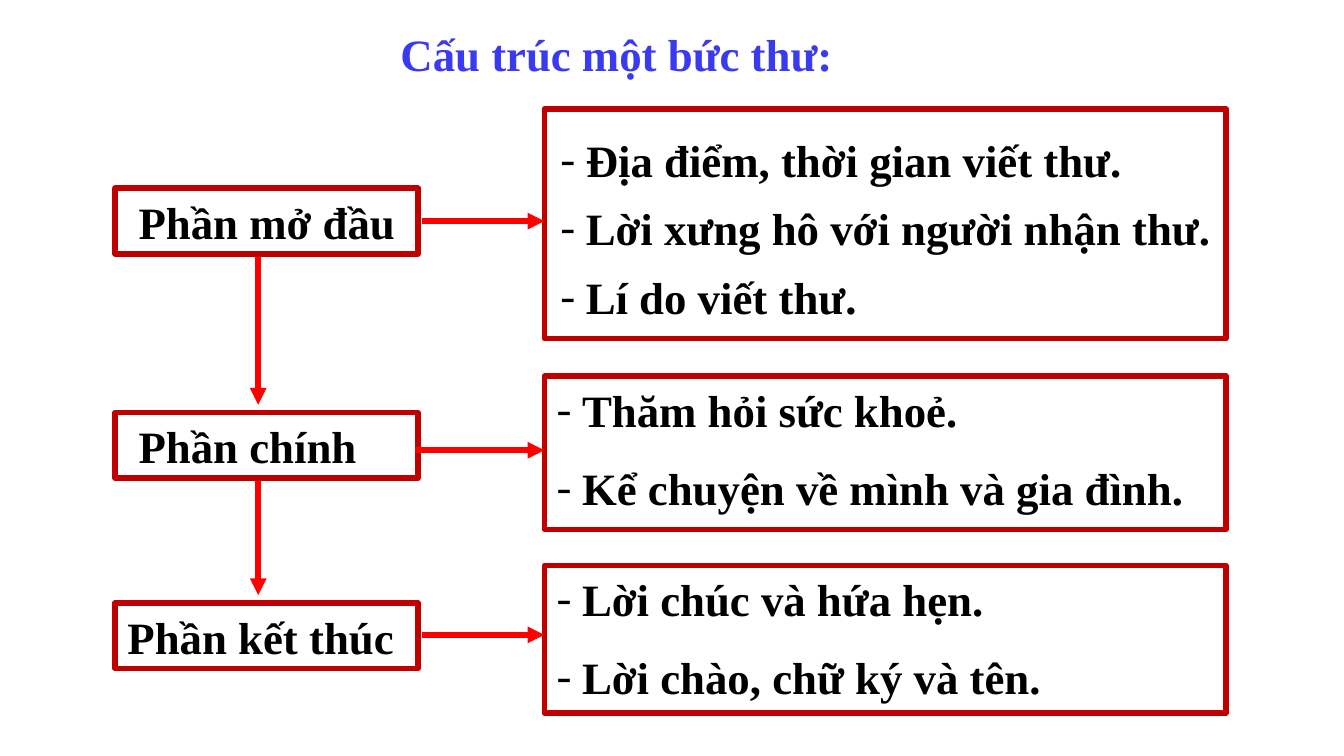
import pptx
import pptx.dml.color
import pptx.enum.shapes
import pptx.enum.text
import pptx.oxml
import pptx.oxml.ns
import pptx.util

Cm = pptx.util.Cm
Pt = pptx.util.Pt
RGBColor = pptx.dml.color.RGBColor
Align = pptx.enum.text.PP_ALIGN

BLUE = RGBColor(0x3A, 0x3A, 0xF0)
BLACK = RGBColor(0x00, 0x00, 0x00)
DARK_RED = RGBColor(0xC0, 0x00, 0x00)
RED = RGBColor(0xFF, 0x00, 0x00)
FONT = "Times New Roman"

HEADING = "Cấu trúc một bức thư:"
PARTS = [
    {
        "name": "Phần mở đầu", "top": 3.56, "indent": 0.44,
        "details": ["Địa điểm, thời gian viết thư.",
                    "Lời xưng hô với người nhận thư.",
                    "Lí do viết thư."],
        "list_top": 2.06, "list_height": 4.34, "insets": (0.3, 0.44), "gap": 8,
        "arrow": (7.98, 4.18),
    },
    {
        "name": "Phần chính", "top": 7.8, "indent": 0.44,
        "details": ["Thăm hỏi sức khoẻ.",
                    "Kể chuyện về mình và gia đình."],
        "list_top": 7.11, "list_height": 2.9, "insets": (0.23, 0.12), "gap": 13,
        "arrow": (7.85, 8.51),
    },
    {
        "name": "Phần kết thúc", "top": 11.4, "indent": 0.23,
        "details": ["Lời chúc và hứa hẹn.",
                    "Lời chào, chữ ký và tên."],
        "list_top": 10.69, "list_height": 2.79, "insets": (0.23, 0.12), "gap": 13,
        "arrow": (7.98, 12),
    },
]

NAME_LEFT, NAME_WIDTH, NAME_HEIGHT = 2.18, 5.72, 1.24
LIST_LEFT, LIST_WIDTH = 10.29, 12.88
DOWN_X = 4.88
HANGING = 0.48


def write(holder, lines, *, color=BLACK, align=Align.LEFT, insets=(0.23, 0.12),
          gap=0, bullet=None):
    frame = holder.text_frame
    frame.text = "\n".join(lines)
    frame.word_wrap = True
    frame.auto_size = pptx.enum.text.MSO_AUTO_SIZE.NONE
    frame.vertical_anchor = pptx.enum.text.MSO_ANCHOR.TOP
    frame.margin_left, frame.margin_top = map(Cm, insets)
    frame.margin_right = frame.margin_bottom = Cm(0.1)
    for number, paragraph in enumerate(frame.paragraphs):
        paragraph.alignment = align
        paragraph.space_before = Pt(gap if number else 0)
        for run in paragraph.runs:
            run.font.name = FONT
            run.font.size = Pt(24)
            run.font.bold = True
            run.font.color.rgb = color
        if bullet:
            properties = paragraph._p.get_or_add_pPr()
            properties.set("marL", str(Cm(HANGING)))
            properties.set("indent", str(-Cm(HANGING)))
            for tag, key, value in (("a:buFont", "typeface", FONT),
                                    ("a:buChar", "char", bullet)):
                mark = pptx.oxml.ns.qn(tag)
                properties.append(properties.makeelement(mark, {key: value}))


def place(holder, left, top, width, height):
    holder.left, holder.top = Cm(left), Cm(top)
    holder.width, holder.height = Cm(width), Cm(height)


def outline(holder):
    holder.fill.background()
    holder.line.color.rgb = DARK_RED
    holder.line.width = Pt(3)


def draw_arrow(slide, *ends):
    arrow = slide.shapes.add_connector(
        pptx.enum.shapes.MSO_CONNECTOR.STRAIGHT, *map(Cm, ends))
    arrow.line.color.rgb = RED
    arrow.line.width = Pt(3)
    qn = pptx.oxml.ns.qn
    line = arrow.line._get_or_add_ln()
    line.append(line.makeelement(qn("a:tailEnd"), {"type": "triangle"}))
    properties = arrow._element.spPr
    properties.append(properties.makeelement(qn("a:effectLst"), {}))


def main():
    deck = pptx.Presentation()
    deck.slide_width, deck.slide_height = Cm(25.4), Cm(14.29)
    slide = deck.slides.add_slide(deck.slide_layouts.get_by_name("Comparison"))
    heading, *lists, spare = slide.placeholders
    spare._element.getparent().remove(spare._element)

    place(heading, 6.15, 0.38, 11, 1.24)
    write(heading, [HEADING], color=BLUE, align=Align.CENTER, insets=(0.1, 0.12))

    for part, details in zip(PARTS, lists):
        place(details, LIST_LEFT, part["list_top"], LIST_WIDTH, part["list_height"])
        outline(details)
        write(details, part["details"], insets=part["insets"], gap=part["gap"],
              bullet="-")

        name = slide.shapes.add_shape(
            pptx.enum.shapes.MSO_SHAPE.RECTANGLE,
            *map(Cm, (NAME_LEFT, part["top"], NAME_WIDTH, NAME_HEIGHT)))
        name.shadow.inherit = False
        outline(name)
        write(name, [part["name"]], insets=(part["indent"], 0.12))

        start, level = part["arrow"]
        draw_arrow(slide, start, level, LIST_LEFT, level)

    for upper, lower in zip(PARTS, PARTS[1:]):
        draw_arrow(slide, DOWN_X, upper["top"] + NAME_HEIGHT + 0.05,
                   DOWN_X, lower["top"] - 0.15)

    deck.save("out.pptx")


if __name__ == "__main__":
    main()
